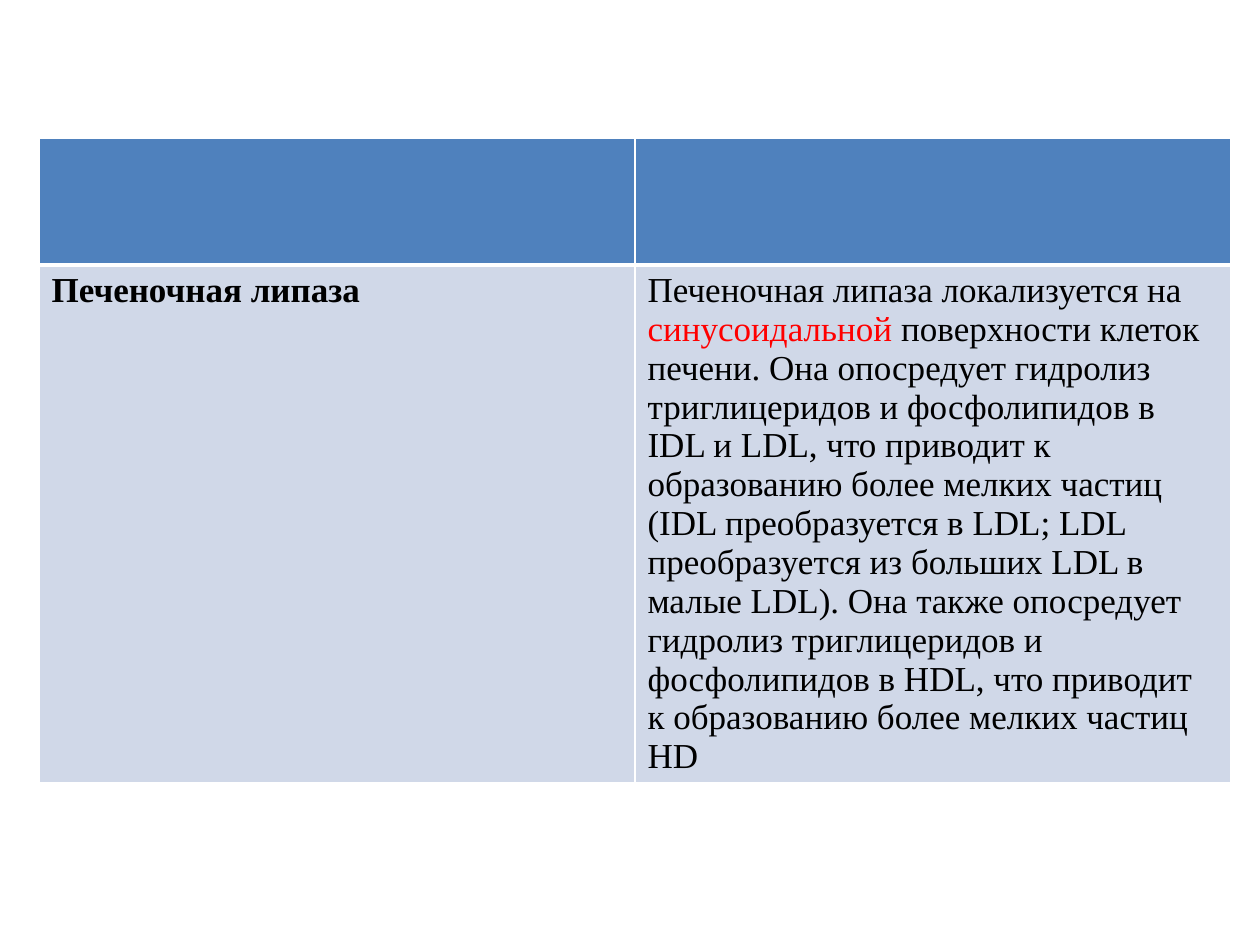
from lxml import etree
from pptx import Presentation
from pptx.dml.color import RGBColor
from pptx.oxml.ns import qn
from pptx.util import Pt

PX = 914400 // 126
FONT = "Times New Roman"
WHITE, BLACK, RED = "FFFFFF", "000000", "FF0000"
HEADER_FILL, BODY_FILL = "4F81BD", "D0D8E8"

ROWS = [
    [[], []],
    [
        [("Печеночная липаза", {"bold": True})],
        [
            ("Печеночная липаза локализуется на ", {}),
            ("синусоидальной", {"color": RED}),
            (" поверхности клеток печени. Она опосредует гидролиз "
             "триглицеридов и фосфолипидов в IDL и LDL, что приводит к "
             "образованию более мелких частиц (IDL преобразуется в LDL; LDL "
             "преобразуется из больших LDL в малые LDL). Она также опосредует "
             "гидролиз триглицеридов и фосфолипидов в HDL, что приводит к "
             "образованию более мелких частиц HD", {}),
        ],
    ],
]


def px(n):
    """Turn whole pixels into EMU."""
    return n * PX


def rgb(value):
    """Turn a hex string into a colour."""
    return RGBColor.from_string(value)


def add_text(p, text, size=20, color=BLACK, bold=False):
    """Add a formatted run to a paragraph."""
    r = p.add_run()
    r.text = text
    r.font.name = FONT
    r.font.size = Pt(size)
    r.font.bold = bold
    r.font.color.rgb = rgb(color)


def set_borders(cell, color=WHITE, **widths):
    """Draw the cell's borders, with widths in points by side."""
    tc_pr = cell._tc.get_or_add_tcPr()
    for side in "LRTB":
        ln = etree.SubElement(tc_pr, qn(f"a:ln{side}"), w=str(Pt(widths.get(side, 1))))
        fill = etree.SubElement(ln, qn("a:solidFill"))
        etree.SubElement(fill, qn("a:srgbClr"), val=color)


def add_lipase_table(s, x, y, w, heights):
    """Place the two-column table of enzymes and their roles."""
    shape = s.shapes.add_table(len(ROWS), len(ROWS[0]), px(x), px(y), px(w), px(sum(heights)))
    table = shape.table
    for i, row in enumerate(ROWS):
        table.rows[i].height = px(heights[i])
        for j, runs in enumerate(row):
            cell = table.cell(i, j)
            set_borders(cell, **({"T": 3} if i else {"B": 3}))
            cell.fill.solid()
            cell.fill.fore_color.rgb = rgb(BODY_FILL if i else HEADER_FILL)
            p = cell.text_frame.paragraphs[0]
            for text, style in runs:
                add_text(p, text, **style)


def main():
    """Build and save the slide."""
    prs = Presentation()
    prs.slide_width, prs.slide_height = px(1260), px(945)
    s = prs.slides.add_slide(prs.slide_layouts[6])
    s.background.fill.solid()
    s.background.fill.fore_color.rgb = rgb(WHITE)
    add_lipase_table(s, 39, 138, 1192, [127, 516])
    prs.save("out.pptx")


if __name__ == "__main__":
    main()
